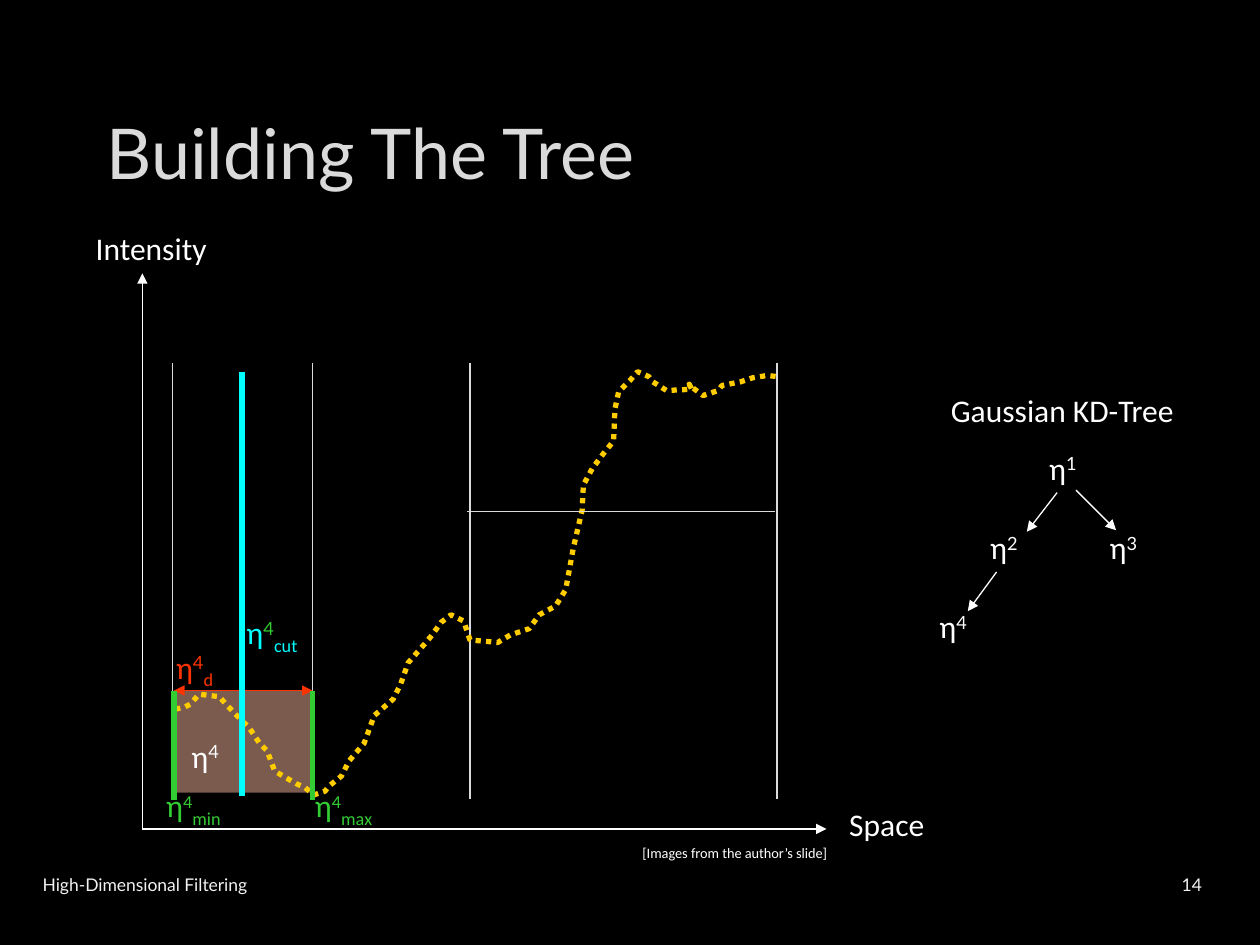
from lxml.etree import SubElement
from pptx import Presentation
from pptx.dml.color import RGBColor
from pptx.enum.dml import MSO_LINE
from pptx.enum.shapes import MSO_CONNECTOR, MSO_SHAPE
from pptx.enum.text import MSO_ANCHOR, PP_ALIGN
from pptx.oxml.ns import qn
from pptx.util import Cm, Pt

BLACK = RGBColor(0x00, 0x00, 0x00)
WHITE = RGBColor(0xFF, 0xFF, 0xFF)
OFF_WHITE = RGBColor(0xF2, 0xF2, 0xF2)
GREY = RGBColor(0xDA, 0xDA, 0xDA)
PEACH = RGBColor(0xF4, 0xB6, 0x9B)
YELLOW = RGBColor(0xFF, 0xCC, 0x00)
RED = RGBColor(0xFF, 0x33, 0x00)
GREEN = RGBColor(0x33, 0xCC, 0x33)
CYAN = RGBColor(0x00, 0xFF, 0xFF)

BODY, HEADING = "Calibri", "Lato"
CURVE_UNIT = Cm(0.0254)  # the signal is sampled on a 1/100 inch grid

SIGNAL = [
    (139, 563), (147, 561), (151, 559), (158, 551), (174, 553), (186, 566),
    (198, 578), (206, 590), (212, 596), (218, 612), (235, 622), (242, 625),
    (249, 631), (258, 628), (261, 624), (271, 616), (277, 604), (289, 590),
    (297, 568), (312, 555), (318, 543), (324, 526), (338, 510), (343, 504),
    (350, 494), (358, 488), (368, 493), (373, 508), (385, 509), (395, 510),
    (405, 504), (420, 499), (428, 488), (441, 481), (449, 468), (455, 435),
    (462, 405), (463, 385), (470, 372), (479, 360), (487, 350), (488, 325),
    (491, 311), (500, 302), (506, 295), (515, 299), (518, 303), (529, 310),
    (549, 309), (547, 305), (550, 308), (558, 314), (570, 310), (573, 306),
    (588, 303), (597, 300), (609, 298), (617, 299),
]


def add_text(p, text, *, size=18, color=WHITE, font=BODY, baseline=0):
    r = p.add_run()
    r.text = text
    r.font.size = Pt(size)
    r.font.name = font
    r.font.color.rgb = color
    if baseline:
        r.font._element.set("baseline", str(baseline * 1000))


class SlideBuilder:
    def __init__(self, prs):
        self.s = prs.slides.add_slide(prs.slide_layouts[6])
        self.s.background.fill.solid()
        self.s.background.fill.fore_color.rgb = BLACK

    def box(self, x, y, w, h, *, wrap=False, anchor=MSO_ANCHOR.TOP, align=PP_ALIGN.LEFT):
        tf = self.s.shapes.add_textbox(Cm(x), Cm(y), Cm(w), Cm(h)).text_frame
        tf.word_wrap = wrap
        tf.vertical_anchor = anchor
        p = tf.paragraphs[0]
        p.alignment = align
        return p

    def label(self, text, x, y, w, h=1.02, *, size=18, color=WHITE, font=BODY, **layout):
        add_text(self.box(x, y, w, h, **layout), text, size=size, color=color, font=font)

    def eta(self, x, y, index, sub="", *, w=1.6, h=1.02, color=WHITE,
            index_color=None, index_font=HEADING):
        p = self.box(x, y, w, h)
        add_text(p, "η", color=color)
        add_text(p, index, color=index_color or color, font=index_font, baseline=30)
        if sub:
            add_text(p, sub, color=color, baseline=-25)

    def line(self, x1, y1, x2, y2, *, color=WHITE, width=0.75, ends=()):
        c = self.s.shapes.add_connector(
            MSO_CONNECTOR.STRAIGHT, Cm(x1), Cm(y1), Cm(x2), Cm(y2))
        c.line.color.rgb = color
        c.line.width = Pt(width)
        ln = c.line._get_or_add_ln()
        for end in ends:
            SubElement(ln, qn(f"a:{end}"), type="triangle")
        SubElement(c._element.spPr, qn("a:effectLst"))

    def arrow(self, x1, y1, x2, y2):
        self.line(x1, y1, x2, y2, ends=["tailEnd"])

    def region(self, x, y, w, h, *, color, opacity):
        sp = self.s.shapes.add_shape(MSO_SHAPE.RECTANGLE, Cm(x), Cm(y), Cm(w), Cm(h))
        sp.shadow.inherit = False
        sp.line.fill.background()
        sp.fill.solid()
        sp.fill.fore_color.rgb = color
        clr = sp._element.spPr.find(f".//{qn('a:srgbClr')}")
        SubElement(clr, qn("a:alpha"), val=str(opacity * 1000))

    def curve(self, points, *, color, width):
        fb = self.s.shapes.build_freeform(*points[0], scale=CURVE_UNIT)
        fb.add_line_segments(points[1:], close=False)
        sp = fb.convert_to_shape()
        sp.shadow.inherit = False
        sp.fill.background()
        sp.line.color.rgb = color
        sp.line.width = Pt(width)
        sp.line.dash_style = MSO_LINE.ROUND_DOT


def main():
    prs = Presentation()
    prs.slide_width, prs.slide_height = Cm(25.4), Cm(19.05)
    b = SlideBuilder(prs)

    # Extent of the cell that is being split
    left, right, top = 3.51, 6.3, 13.92

    # Earlier vertical cuts and the highlighted cell
    for x in (3.48, right, 9.47, 15.67):
        b.line(x, 7.32, x, 16.1, color=GREY, width=1)
    b.region(left, top, right - left, 2.06, color=PEACH, opacity=50)

    b.label("Building The Tree", 1.9, 1.7, 21.56, 2.69, size=40, color=GREY,
            font=HEADING, wrap=True, anchor=MSO_ANCHOR.MIDDLE)

    # Signal and axes
    b.curve(SIGNAL, color=YELLOW, width=3)
    b.arrow(2.87, 16.71, 16.66, 16.71)
    b.arrow(2.87, 16.71, 2.87, 5.51)
    b.label("Space", 16.87, 16.1, 2.03)
    b.label("Intensity", 1.68, 4.5, 2.77)

    # Cell width, bounds and cut
    b.line(left, top, right, top, color=RED, ends=["headEnd", "tailEnd"])
    b.eta(3.3, 12.93, "4", "d", h=1.78, color=RED)
    for x in (left, right):
        b.line(x, top, x, 16.13, color=GREEN, width=3)
    for x, bound in ((3.1, "min"), (6.1, "max")):
        b.eta(x, 15.72, "4", bound, w=2.05, color=GREEN, index_font=BODY)
    b.line(4.88, 7.49, 4.88, 16.05, color=CYAN, width=3)
    b.eta(4.72, 12.24, "4", "cut", w=1.93, color=CYAN, index_color=GREEN)
    b.eta(3.61, 14.73, "4")
    b.line(9.42, 10.31, 15.62, 10.31, color=GREY, width=1)

    # Tree
    b.label("Gaussian KD-Tree", 18.92, 7.75, 5.05)
    for index, x, y in (("1", 20.9, 8.92), ("2", 19.71, 10.52),
                        ("3", 22.12, 10.52), ("4", 18.69, 12.12)):
        b.eta(x, y, index)
    b.arrow(21.31, 9.93, 20.7, 10.72)
    b.arrow(21.69, 9.88, 22.5, 10.69)
    b.arrow(20.09, 11.53, 19.51, 12.32)

    # Credit and footer
    b.label("[Images from the author’s slide]", 12.7, 16.89, 4.34, 0.61, size=8.2)
    footer = dict(size=10, color=OFF_WHITE, font=HEADING, wrap=True,
                  anchor=MSO_ANCHOR.MIDDLE)
    b.label("High-Dimensional Filtering", 0.61, 17.32, 13.89, **footer)
    b.label("14", 22.91, 17.32, 1.57, align=PP_ALIGN.RIGHT, **footer)

    prs.save("out.pptx")


if __name__ == "__main__":
    main()
